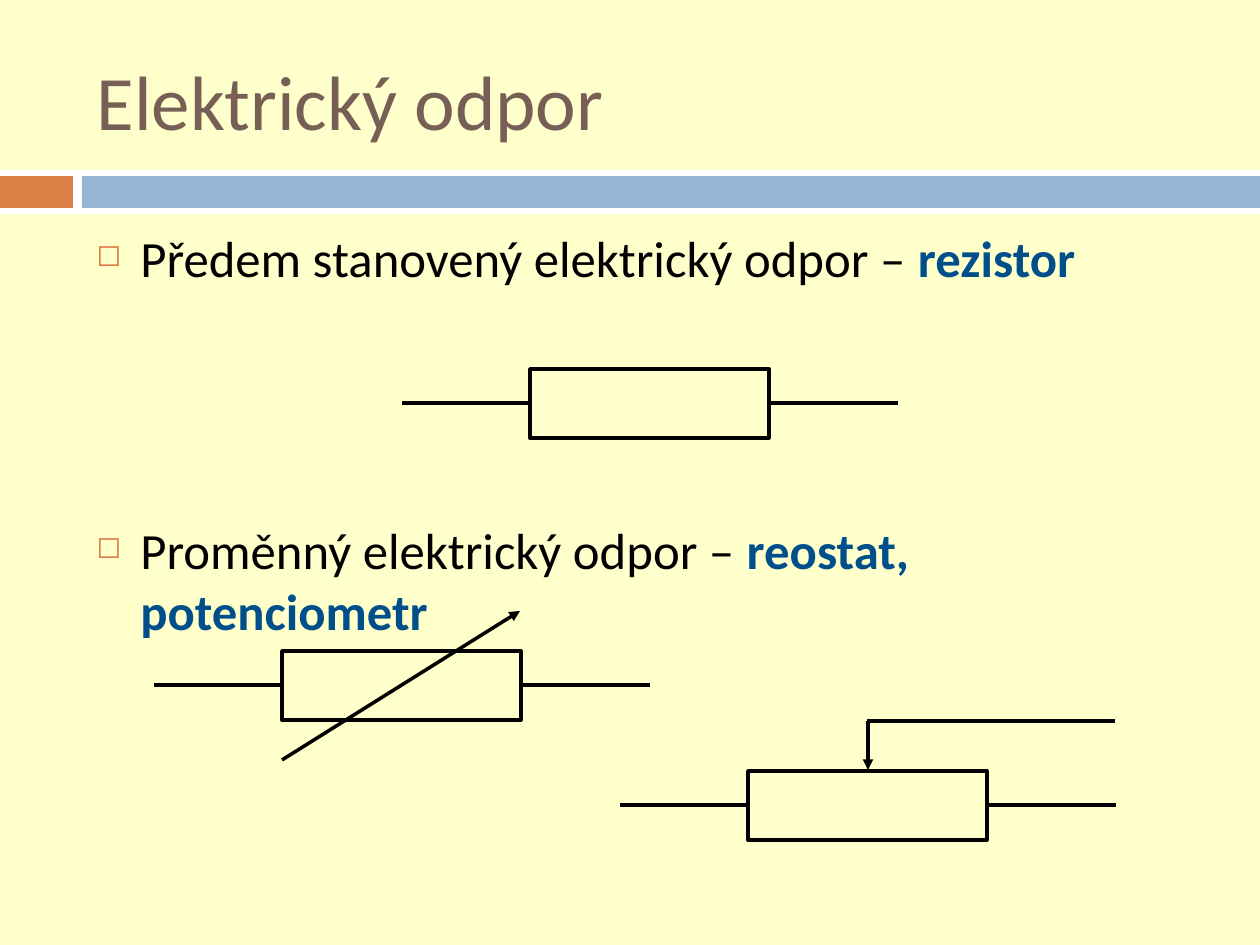
from lxml import etree
from pptx import Presentation
from pptx import util as u
from pptx.dml.color import RGBColor
from pptx.enum import shapes, text
from pptx.oxml.ns import qn

PX = 914400 // 126
FONT = "Calibri"
CREAM, BLACK, ORANGE, BLUE = "FFFFCC", "000000", "DD8047", "004F8A"

TITLE = "Elektrický odpor"
# Space before in points, plain words, key words
BULLETS = [
    (0, "Předem stanovený elektrický odpor – ", "rezistor"),
    (132, "Proměnný elektrický odpor – ", "reostat, potenciometr"),
]
# Left, top, width, height, colour
BANDS = [
    (0, 170, 1260, 44, "FFFFFF"),
    (0, 176, 73, 32, ORANGE),
    (82, 176, 1178, 32, "94B6D2"),
]
# Wire start (x, y), then extra lines relative to it: x1, y1, x2, y2, arrow
SYMBOLS = [
    ((402, 403), []),
    ((154, 685), [(128, 75, 366, -74, True)]),
    ((620, 805), [(248, -84, 248, -35, True), (247, -84, 495, -84, False)]),
]
WIRE, BODY_X, BODY_W, BODY_H = 496, 128, 239, 69


def px(*values):
    return [value * PX for value in values]


def colour(hex_string):
    return RGBColor.from_string(hex_string)


def add_rect(parent, left, top, width, height, fill, outlined=False):
    shape = parent.add_shape(shapes.MSO_SHAPE.RECTANGLE, *px(left, top, width, height))
    shape.shadow.inherit = False
    shape.fill.solid()
    shape.fill.fore_color.rgb = colour(fill)
    if outlined:
        shape.line.color.rgb = colour(BLACK)
        shape.line.width = u.Pt(2)
    else:
        shape.line.fill.background()


def add_line(parent, x1, y1, x2, y2, arrow=False):
    line = parent.add_connector(shapes.MSO_CONNECTOR.STRAIGHT, *px(x1, y1, x2, y2))
    line.line.color.rgb = colour(BLACK)
    line.line.width = u.Pt(2)
    if arrow:
        etree.SubElement(line.line._get_or_add_ln(), qn("a:tailEnd"), type="triangle")
    etree.SubElement(line._element.spPr, qn("a:effectLst"))


def add_span(para, words, size, hex_string, bold=False):
    span = para.add_run()
    span.text = words
    span.font.name = FONT
    span.font.size = u.Pt(size)
    span.font.bold = bold
    span.font.color.rgb = colour(hex_string)


def add_bullet(para):
    props = para._p.get_or_add_pPr()
    indent = 44 * PX
    props.set("marL", str(indent))
    props.set("indent", str(-indent))
    bullet_colour = etree.SubElement(props, qn("a:buClr"))
    etree.SubElement(bullet_colour, qn("a:srgbClr"), val=ORANGE)
    etree.SubElement(props, qn("a:buSzPct"), val="60000")
    etree.SubElement(props, qn("a:buChar"), char="◻")


deck = Presentation()
deck.slide_width, deck.slide_height = px(1260, 945)
page = deck.slides.add_slide(deck.slide_layouts[5])
page.background.fill.solid()
page.background.fill.fore_color.rgb = colour(CREAM)

# Bands under the title
for band in BANDS:
    add_rect(page.shapes, *band)

# Title
title = page.shapes.title
title.left, title.top, title.width, title.height = px(84, 32, 1124, 136)
frame = title.text_frame
frame.auto_size = text.MSO_AUTO_SIZE.NONE
frame.vertical_anchor = text.MSO_ANCHOR.MIDDLE
frame.paragraphs[0].alignment = text.PP_ALIGN.LEFT
add_span(frame.paragraphs[0], TITLE, 44, "775F55")

# Bulleted text
box = page.shapes.add_textbox(*px(84, 221, 1124, 620))
box.text_frame.word_wrap = True
for index, (space, plain, key) in enumerate(BULLETS):
    para = box.text_frame.add_paragraph() if index else box.text_frame.paragraphs[0]
    add_bullet(para)
    if space:
        para.space_before = u.Pt(space)
    add_span(para, plain, 29, BLACK)
    add_span(para, key, 29, BLUE, bold=True)

# Circuit symbols: a wire, the resistor body over it, then arrows and leads
for (x, y), extras in SYMBOLS:
    symbol = page.shapes.add_group_shape().shapes
    add_line(symbol, x, y, x + WIRE, y)
    add_rect(symbol, x + BODY_X, y - BODY_H // 2, BODY_W, BODY_H, CREAM, outlined=True)
    for x1, y1, x2, y2, arrow in extras:
        add_line(symbol, x + x1, y + y1, x + x2, y + y2, arrow)

deck.save("out.pptx")
